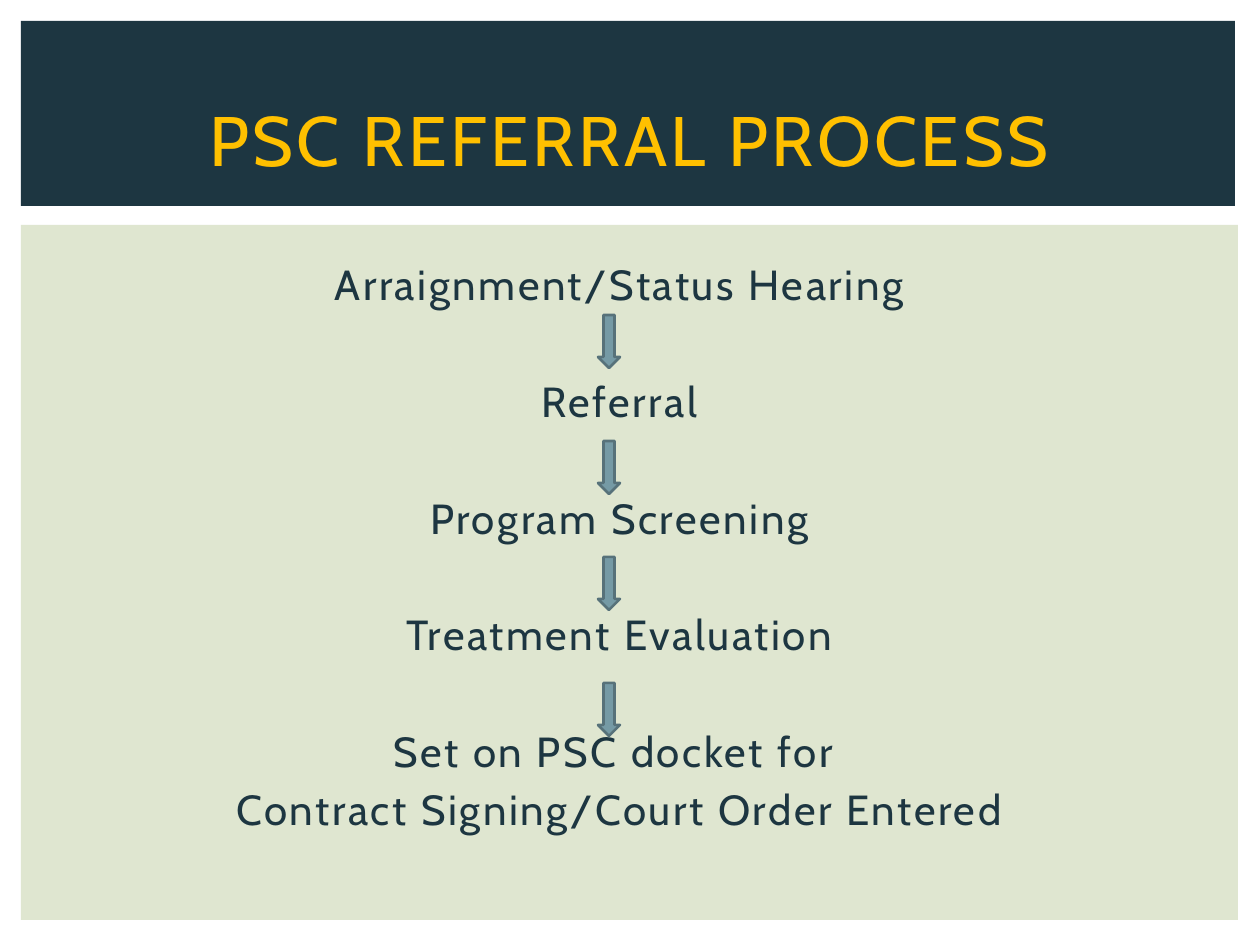
from pptx import Presentation
from pptx.dml.color import RGBColor as Rgb
from pptx.enum.shapes import MSO_SHAPE as Geo
from pptx.enum.text import MSO_ANCHOR as Anchor, PP_ALIGN as Align
from pptx.util import Emu, Pt

COLORS = {
    "navy": "1D3641",
    "sage": "DFE6D0",
    "gold": "FFC000",
    "arrow": "759AA5",
    "arrow_edge": "57727A",
}
STEP_GAP = 38
LINE_GAP = 4.4
STEPS = [
    ("Arraignment/Status Hearing", 0),
    ("Referral", STEP_GAP),
    ("Program Screening", STEP_GAP),
    ("Treatment Evaluation", STEP_GAP),
    ("Set on PSC docket for ", STEP_GAP),
    ("Contract Signing/Court Order Entered", LINE_GAP),
]
ARROW_TOPS = [315, 441, 557, 683]


class Deck:
    font = "Cabin"
    scale = 914400 / 126

    def __init__(self, width, height):
        self.prs = Presentation()
        self.prs.slide_width = self.px(width)
        self.prs.slide_height = self.px(height)
        self.slide = self.prs.slides.add_slide(self.prs.slide_layouts[6])

    def px(self, length):
        return Emu(round(length * self.scale))

    def box(self, *lengths):
        return [self.px(length) for length in lengths]

    def shape(self, geometry, bounds, fill, edge=None):
        shape = self.slide.shapes.add_shape(geometry, *self.box(*bounds))
        shape.shadow.inherit = False
        shape.fill.solid()
        shape.fill.fore_color.rgb = Rgb.from_string(COLORS[fill])
        if edge:
            shape.line.color.rgb = Rgb.from_string(COLORS[edge])
            shape.line.width = Pt(1.5)
        else:
            shape.line.fill.background()

    def text(self, bounds, lines, size, color, spacing, anchor=Anchor.TOP):
        frame = self.slide.shapes.add_textbox(*self.box(*bounds)).text_frame
        frame.word_wrap = True
        frame.vertical_anchor = anchor
        for index, (words, gap) in enumerate(lines):
            paragraph = frame.add_paragraph() if index else frame.paragraphs[0]
            paragraph.alignment = Align.CENTER
            if gap:
                paragraph.space_before = Pt(gap)
            run = paragraph.add_run()
            run.text = words
            run.font.name = self.font
            run.font.size = Pt(size)
            run.font.color.rgb = Rgb.from_string(COLORS[color])
            run.font._element.set("spc", str(round(spacing * 100)))

    def save(self):
        self.prs.save("out.pptx")


def main():
    deck = Deck(1260, 945)
    deck.shape(Geo.RECTANGLE, (21, 225, 1217, 695), "sage")
    deck.shape(Geo.RECTANGLE, (21, 21, 1214, 185), "navy")
    deck.text((94, 60, 1071, 157), [("PSC REFERRAL PROCESS", 0)],
              40, "gold", 2, Anchor.MIDDLE)
    deck.text((84, 252, 1071, 662), STEPS, 24, "navy", 1.5)
    for top in ARROW_TOPS:
        deck.shape(Geo.DOWN_ARROW, (598, top, 22, 53), "arrow", "arrow_edge")
    deck.save()


if __name__ == "__main__":
    main()
